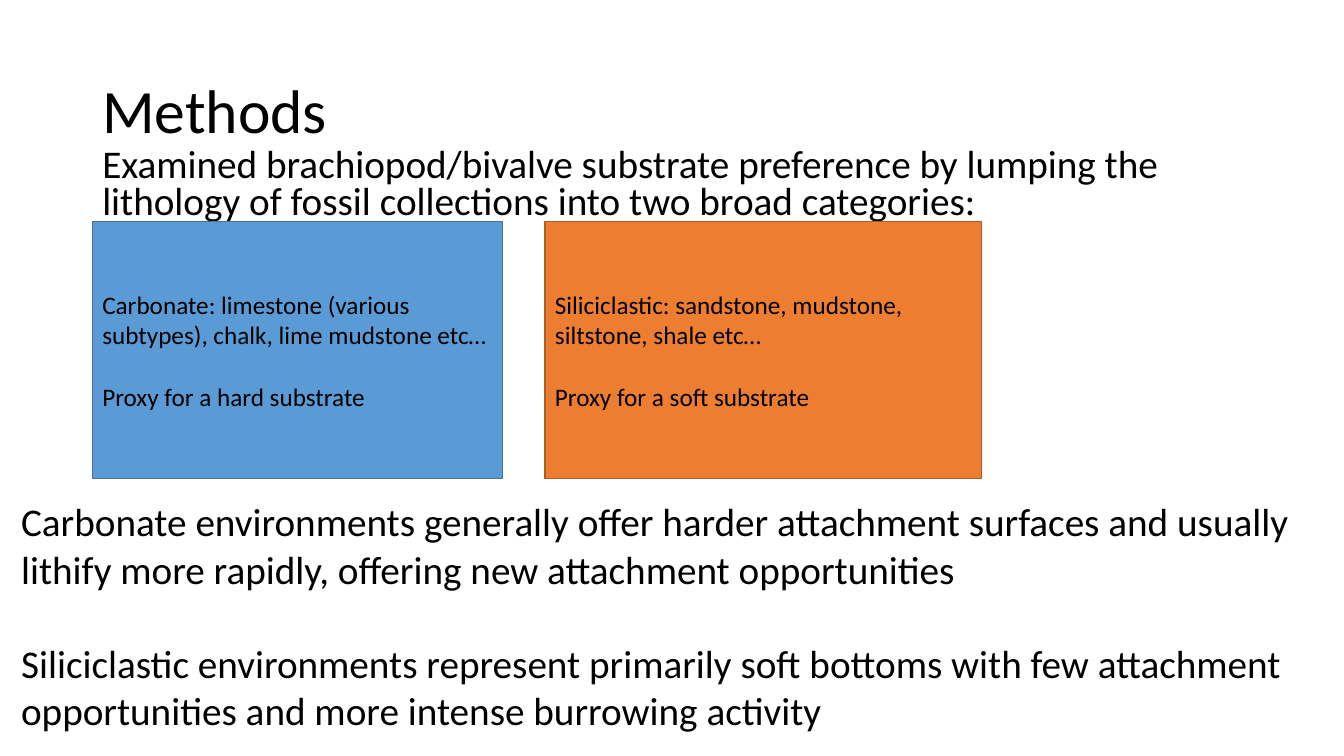
from pptx import Presentation
from pptx.dml.color import RGBColor
from pptx.enum.shapes import MSO_SHAPE
from pptx.enum.text import MSO_ANCHOR, PP_ALIGN
from pptx.util import Pt

RECTANGLE = MSO_SHAPE.RECTANGLE
MIDDLE, TOP = MSO_ANCHOR.MIDDLE, MSO_ANCHOR.TOP
LEFT = PP_ALIGN.LEFT
FONT = "Calibri"
COLORS = {
    "text": "000000",
    "carbonate": "5B9BD5",
    "carbonate_line": "43739E",
    "siliciclastic": "ED7D31",
    "siliciclastic_line": "AF5C24",
}


def color(name):
    """Return the named colour."""
    return RGBColor.from_string(COLORS[name])


def write_text(shape, paragraphs, size, anchor=TOP, line_spacing=1.0, first_gap=0, gap=0):
    """Fill a shape with left-aligned paragraphs in one text style."""
    frame = shape.text_frame
    frame.word_wrap = True
    frame.vertical_anchor = anchor
    frame.text = "\n".join(paragraphs)
    for index, paragraph in enumerate(frame.paragraphs):
        paragraph.alignment = LEFT
        paragraph.line_spacing = line_spacing
        paragraph.space_before = Pt(gap if index else first_gap)
        for run in paragraph.runs:
            run.font.name = FONT
            run.font.size = Pt(size)
            run.font.color.rgb = color("text")


def add_text(slide, box, paragraphs, size, **style):
    """Add a text box in the given box."""
    shape = slide.shapes.add_textbox(*map(Pt, box))
    write_text(shape, paragraphs, size, **style)


def add_heading(slide, left, top, width):
    """Add the title and the introduction below it."""
    add_text(slide, (left, top, width, 104.4), ["Methods"], 44,
             anchor=MIDDLE, line_spacing=0.9)
    introduction = ("Examined brachiopod/bivalve substrate preference by lumping the "
                    "lithology of fossil collections into two broad categories:")
    add_text(slide, (left, top + 73.4, width, 63.4), [introduction], 28,
             line_spacing=0.8, first_gap=10)


def add_category(slide, box, name, paragraphs):
    """Add one coloured lithology panel."""
    panel = slide.shapes.add_shape(RECTANGLE, *map(Pt, box))
    panel.shadow.inherit = False
    panel.fill.solid()
    panel.fill.fore_color.rgb = color(name)
    panel.line.color.rgb = color(name + "_line")
    panel.line.width = Pt(1)
    write_text(panel, paragraphs, 18, anchor=MIDDLE, gap=22)


def add_categories(slide, left, top, height):
    """Add the two lithology panels side by side."""
    categories = [
        ("carbonate", 293,
         ["Carbonate: limestone (various subtypes), chalk, lime mudstone etc…",
          "Proxy for a hard substrate"]),
        ("siliciclastic", 311.8,
         ["Siliciclastic: sandstone, mudstone, siltstone, shale etc…",
          "Proxy for a soft substrate"]),
    ]
    for name, width, paragraphs in categories:
        add_category(slide, (left, top, width, height), name, paragraphs)
        left += width + 30.3


def add_explanation(slide, box):
    """Add the closing explanation of both environments."""
    add_text(slide, box, [
        "Carbonate environments generally offer harder attachment surfaces and "
        "usually lithify more rapidly, offering new attachment opportunities",
        "Siliciclastic environments represent primarily soft bottoms with few "
        "attachment opportunities and more intense burrowing activity",
    ], 28, gap=34)


def main():
    """Build and save the methods slide."""
    presentation = Presentation()
    presentation.slide_width = Pt(960)
    presentation.slide_height = Pt(540)
    slide = presentation.slides.add_slide(presentation.slide_layouts[6])
    add_heading(slide, 66, 28.8, 828)
    add_categories(slide, 66, 158.4, 183.6)
    add_explanation(slide, (8, 352, 946, 177))
    presentation.save("out.pptx")


if __name__ == "__main__":
    main()
